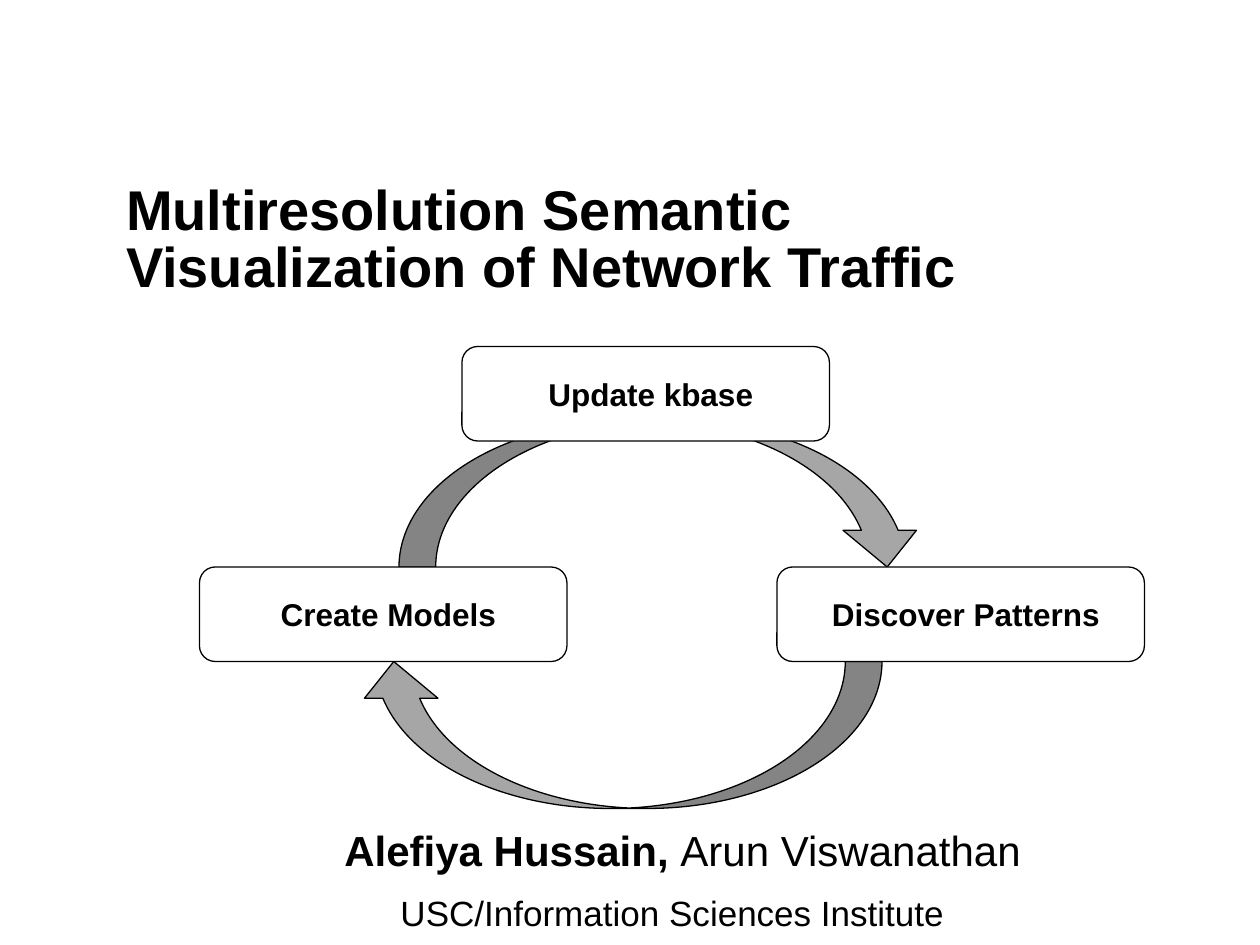
from pptx import Presentation
from pptx.dml.color import RGBColor
from pptx.enum.shapes import MSO_SHAPE
from pptx.enum.text import MSO_ANCHOR, MSO_AUTO_SIZE, PP_ALIGN
from pptx.util import Inches, Pt

COLORS = {"ink": "000000", "paper": "FFFFFF", "arrow": "A6A6A6"}

deck = Presentation()
deck.slide_width, deck.slide_height = Inches(10), Inches(7.5)
page = deck.slides.add_slide(deck.slide_layouts[0])
cell = deck.slide_width / 120


def place(shape, *grid):
    shape.left, shape.top, shape.width, shape.height = [int(n * cell) for n in grid]


def style_font(font, size, bold):
    font.name, font.size, font.bold = "Arial", Pt(size), bold
    font.color.rgb = RGBColor.from_string(COLORS["ink"])


title, authors = page.shapes.title, page.placeholders[1]
place(title, 12, 17, 85, 11.5)
place(authors, 17, 78.2, 96, 11)
for holder, anchor in ((title, MSO_ANCHOR.BOTTOM), (authors, MSO_ANCHOR.TOP)):
    frame = holder.text_frame
    frame.word_wrap, frame.auto_size = True, MSO_AUTO_SIZE.NONE
    frame.vertical_anchor = anchor
    frame.margin_left = frame.margin_right = frame.margin_top = frame.margin_bottom = 0

title.text_frame.text = "Multiresolution Semantic Visualization of Network Traffic"
heading = title.text_frame.paragraphs[0]
heading.alignment, heading.line_spacing = PP_ALIGN.LEFT, 0.85
style_font(heading.font, 32, True)

names = authors.text_frame.paragraphs[0]
for text, bold in (("Alefiya Hussain, ", True), ("Arun Viswanathan", False)):
    span = names.add_run()
    span.text = text
    style_font(span.font, 24, bold)
institute = authors.text_frame.add_paragraph()
institute.text = "USC/Information Sciences Institute"
institute._p.get_or_add_pPr().set("marR", str(Inches(0.16)))
style_font(institute.font, 20, False)
for para in authors.text_frame.paragraphs:
    para.alignment, para.line_spacing = PP_ALIGN.CENTER, Pt(30.5)
    para.space_before, para.space_after = Pt(0), Pt(3)

cycle = [
    (MSO_SHAPE.CURVED_LEFT_ARROW, (56, 22, 14, 50), 270, "arrow", ""),
    (MSO_SHAPE.CURVED_LEFT_ARROW, (52, 45, 14, 50), 90, "arrow", ""),
    (MSO_SHAPE.ROUNDED_RECTANGLE, (74, 54, 35, 9), 0, "paper", "Discover Patterns"),
    (MSO_SHAPE.ROUNDED_RECTANGLE, (19, 54, 35, 9), 0, "paper", "Create Models"),
    (MSO_SHAPE.ROUNDED_RECTANGLE, (44, 33, 35, 9), 0, "paper", "Update kbase"),
]
for kind, grid, turn, color, label in cycle:
    shape = page.shapes.add_shape(kind, 0, 0, 0, 0)
    place(shape, *grid)
    shape.rotation = turn
    shape.shadow.inherit = False
    shape.fill.solid()
    shape.fill.fore_color.rgb = RGBColor.from_string(COLORS[color])
    shape.line.color.rgb = RGBColor.from_string(COLORS["ink"])
    shape.line.width = Pt(0.75)
    if label:
        shape.text_frame.text = label
        shape.text_frame.margin_left = Inches(0.18)
        shape.text_frame.vertical_anchor = MSO_ANCHOR.MIDDLE
        para = shape.text_frame.paragraphs[0]
        para.alignment = PP_ALIGN.CENTER
        style_font(para.font, 18, True)

deck.save("out.pptx")
